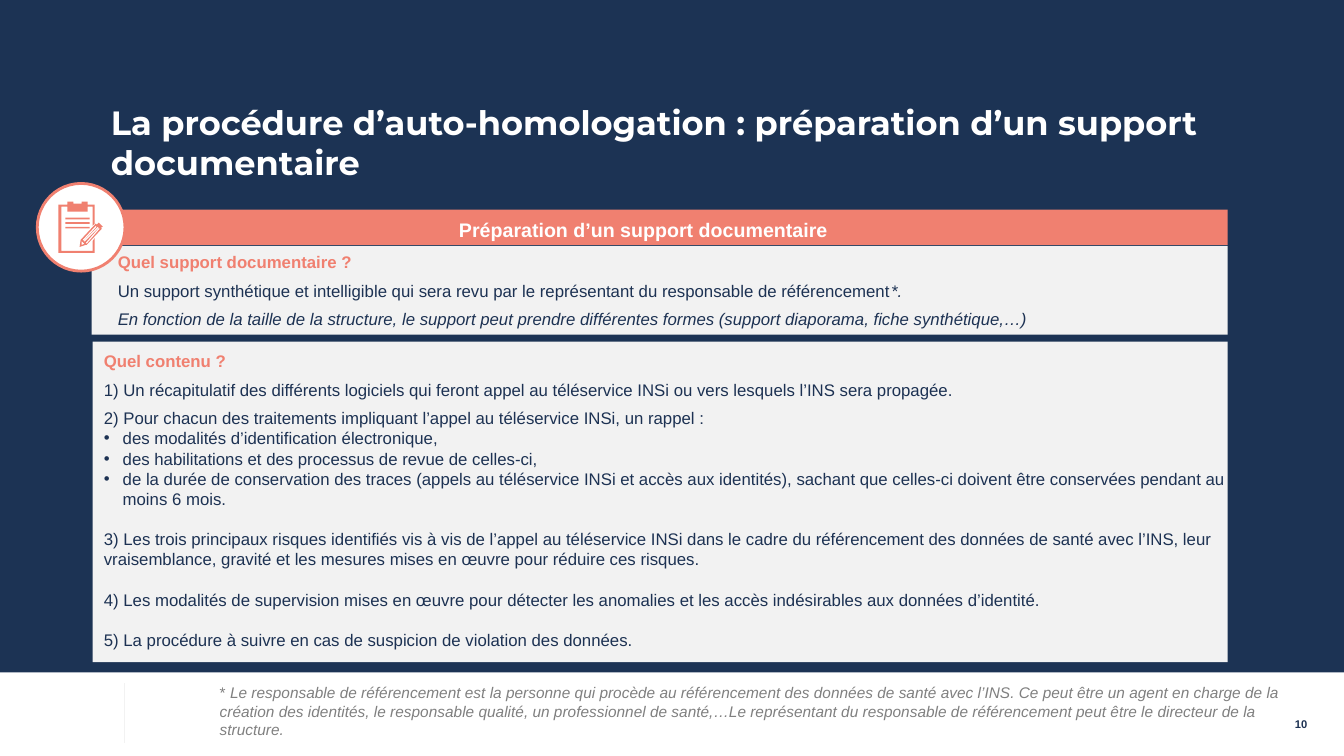
from dataclasses import dataclass

from lxml.etree import SubElement
from pptx import Presentation
from pptx.dml.color import RGBColor
from pptx.enum.shapes import MSO_CONNECTOR, MSO_SHAPE
from pptx.enum.text import MSO_ANCHOR, MSO_AUTO_SIZE, PP_ALIGN
from pptx.oxml.ns import qn
from pptx.util import Pt

NAVY = RGBColor(0x1C, 0x33, 0x54)
INK = RGBColor(0x1D, 0x32, 0x53)
CORAL = RGBColor(0xF0, 0x80, 0x70)
PALE = RGBColor(0xF2, 0xF2, 0xF2)
GREY = RGBColor(0x80, 0x80, 0x80)
WHITE = RGBColor(0xFF, 0xFF, 0xFF)


@dataclass(frozen=True)
class Box:
    left: float
    top: float
    width: float
    height: float


@dataclass(frozen=True)
class Span:
    text: str
    size: float = 12
    color: RGBColor = INK
    bold: bool = False
    italic: bool = False
    font: str = "Arial"


@dataclass(frozen=True)
class Line:
    spans: tuple[Span, ...]
    before: float = 0
    after: float = 0
    bullet: bool = False
    align: PP_ALIGN = PP_ALIGN.LEFT


def place(shape, box: Box) -> None:
    shape.left, shape.top = Pt(box.left), Pt(box.top)
    shape.width, shape.height = Pt(box.width), Pt(box.height)


def paint(shape, color: RGBColor) -> None:
    shape.shadow.inherit = False
    shape.fill.solid()
    shape.fill.fore_color.rgb = color
    shape.line.fill.background()


def draw(shapes, kind: MSO_SHAPE, box: Box, color: RGBColor):
    shape = shapes.add_shape(kind, Pt(box.left), Pt(box.top), Pt(box.width), Pt(box.height))
    paint(shape, color)
    return shape


def write(frame, lines: list[Line], insets=(7.2, 3.6, 7.2, 3.6), anchor=MSO_ANCHOR.TOP) -> None:
    frame.word_wrap = True
    frame.auto_size = MSO_AUTO_SIZE.NONE
    frame.vertical_anchor = anchor
    frame.margin_left, frame.margin_top, frame.margin_right, frame.margin_bottom = map(Pt, insets)
    for index, line in enumerate(lines):
        paragraph = frame.add_paragraph() if index else frame.paragraphs[0]
        properties = paragraph._p.get_or_add_pPr()
        indent = Pt(13.5) if line.bullet else 0
        properties.set("marL", str(indent))
        properties.set("indent", str(-indent))
        if line.bullet:
            SubElement(properties, qn("a:buFont")).set("typeface", "Arial")
            SubElement(properties, qn("a:buChar")).set("char", "•")
        else:
            SubElement(properties, qn("a:buNone"))
        paragraph.alignment = line.align
        paragraph.space_before, paragraph.space_after = Pt(line.before), Pt(line.after)
        for span in line.spans:
            run = paragraph.add_run()
            run.text = span.text
            run.font.name, run.font.size = span.font, Pt(span.size)
            run.font.bold, run.font.italic = span.bold, span.italic
            run.font.color.rgb = span.color


def add_text(shapes, box: Box, lines: list[Line], **layout) -> None:
    area = shapes.add_textbox(Pt(box.left), Pt(box.top), Pt(box.width), Pt(box.height))
    write(area.text_frame, lines, **layout)


def fill_placeholder(placeholder, box: Box, lines: list[Line], **layout) -> None:
    placeholder.element.getparent().append(placeholder.element)
    place(placeholder, box)
    write(placeholder.text_frame, lines, **layout)


def outline(shapes, contours: list[list[tuple[int, int]]]) -> None:
    builder = shapes.build_freeform(*contours[0][0], scale=Pt(0.72))
    for index, contour in enumerate(contours):
        if index:
            builder.move_to(*contour[0])
        builder.add_line_segments(contour[1:], close=True)
    paint(builder.convert_to_shape(), CORAL)


CLIPBOARD = [[
    (92, 249), (61, 249), (61, 205), (67, 205), (67, 210), (87, 210), (87, 205), (92, 205),
    (92, 224), (94, 222), (94, 203), (87, 203), (87, 200), (81, 200), (81, 202), (73, 202),
    (73, 200), (67, 200), (67, 203), (58, 203), (58, 251), (94, 251), (94, 236), (92, 239),
]]
PENCIL = [
    [(102, 225), (98, 221), (96, 223), (95, 222), (80, 238), (79, 245),
     (85, 243), (86, 243), (101, 227), (100, 226)],
    [(98, 226), (84, 240), (83, 239), (97, 225)],
    [(95, 224), (96, 225), (83, 239), (82, 238)],
    [(81, 243), (81, 242), (81, 239), (84, 242)],
    [(86, 242), (85, 241), (98, 226), (99, 227)],
]


def heading(text: str) -> Line:
    return Line((Span(text, color=CORAL, bold=True),), after=6)


def item(text: str, before: float = 0, after: float = 0, bullet: bool = False) -> Line:
    return Line((Span(text),), before, after, bullet)


CONTENT = [
    heading("Quel contenu ?"),
    item("1) Un récapitulatif des différents logiciels qui feront appel au téléservice INSi ou vers lesquels l’INS sera propagée.", after=6),
    item("2) Pour chacun des traitements impliquant l’appel au téléservice INSi, un rappel :"),
    item("des modalités d’identification électronique,", bullet=True),
    item("des habilitations et des processus de revue de celles-ci,", bullet=True),
    item("de la durée de conservation des traces (appels au téléservice INSi et accès aux identités), sachant que celles-ci doivent être conservées pendant au moins 6 mois.", bullet=True),
    item("3) Les trois principaux risques identifiés vis à vis de l’appel au téléservice INSi dans le cadre du référencement des données de santé avec l’INS, leur vraisemblance, gravité et les mesures mises en œuvre pour réduire ces risques.", before=14.4),
    item("4) Les modalités de supervision mises en œuvre pour détecter les anomalies et les accès indésirables aux données d’identité.", before=14.4),
    item("5) La procédure à suivre en cas de suspicion de violation des données.", before=14.4),
]
SUPPORT = [
    heading("Quel support documentaire ?"),
    Line((
        Span("Un support synthétique et intelligible qui sera revu par le représentant du responsable de référencement"),
        Span("*.", italic=True),
    ), after=6),
    Line((Span("En fonction de la taille de la structure, le support peut prendre différentes formes (support diaporama, fiche synthétique,…)", italic=True),), after=6),
]
FOOTNOTE = [Line((
    Span("* ", 11, GREY),
    Span("Le responsable de référencement est la personne qui procède au référencement des données de santé avec l’INS. Ce peut être un agent en charge de la création des identités, le responsable qualité, un professionnel de santé,…Le représentant du responsable de référencement peut être le directeur de la structure.", 11, GREY, italic=True),
))]
TITLE = [Line((Span("La procédure d’auto-homologation : préparation d’un support documentaire", 24, WHITE, True, font="Montserrat"),))]
BANNER = [Line((Span("Préparation d’un support documentaire", 14, WHITE, True),), align=PP_ALIGN.CENTER)]
PAGE = [Line((Span("10", 8, INK, True),), align=PP_ALIGN.RIGHT)]


def main() -> None:
    presentation = Presentation()
    presentation.slide_width, presentation.slide_height = Pt(960), Pt(540)
    slide = presentation.slides.add_slide(presentation.slide_layouts[1])
    shapes = slide.shapes
    title, content = shapes.title, slide.placeholders[1]
    slide.background.fill.solid()
    slide.background.fill.fore_color.rgb = NAVY

    for box, color in (
        (Box(0, 480.24, 960, 59.76), WHITE),
        (Box(66.24, 244.08, 810.72, 228.96), PALE),
        (Box(65.52, 175.68, 811.44, 63.36), PALE),
        (Box(58.32, 149.76, 818.64, 25.2), CORAL),
    ):
        draw(shapes, MSO_SHAPE.RECTANGLE, box, color)

    divider = shapes.add_connector(MSO_CONNECTOR.STRAIGHT, Pt(88.92), Pt(488.16), Pt(88.92), Pt(530.64))
    divider.line.color.rgb, divider.line.width = PALE, Pt(0.75)
    SubElement(divider.element.spPr, qn("a:effectLst"))

    fill_placeholder(title, Box(67.68, 72.72, 866.16, 38.16), TITLE, insets=(11.52, 0, 0, 0))
    fill_placeholder(content, Box(66.96, 246.96, 821.52, 223.2), CONTENT)

    icon = shapes.add_group_shape().shapes
    badge = draw(icon, MSO_SHAPE.OVAL, Box(26.64, 131.04, 62.64, 62.64), WHITE)
    badge.line.color.rgb, badge.line.width = CORAL, Pt(2)
    outline(icon, CLIPBOARD)
    for row in range(3):
        draw(icon, MSO_SHAPE.RECTANGLE, Box(46.8, 155.52 + 3.24 * row, 17.28, 1.2), CORAL)
    outline(icon, PENCIL)

    add_text(shapes, Box(77.04, 176.4, 800.64, 63.36), SUPPORT)
    add_text(shapes, Box(284.4, 151.92, 350.64, 24.48), BANNER)
    add_text(shapes, Box(151.2, 479.52, 772.56, 40.32), FOOTNOTE, insets=(5.76, 8.64, 5.76, 8.64))
    add_text(shapes, Box(717.84, 502.56, 216, 28.8), PAGE, insets=(7.2, 3.6, 0, 3.6), anchor=MSO_ANCHOR.MIDDLE)
    presentation.save("out.pptx")


if __name__ == "__main__":
    main()
